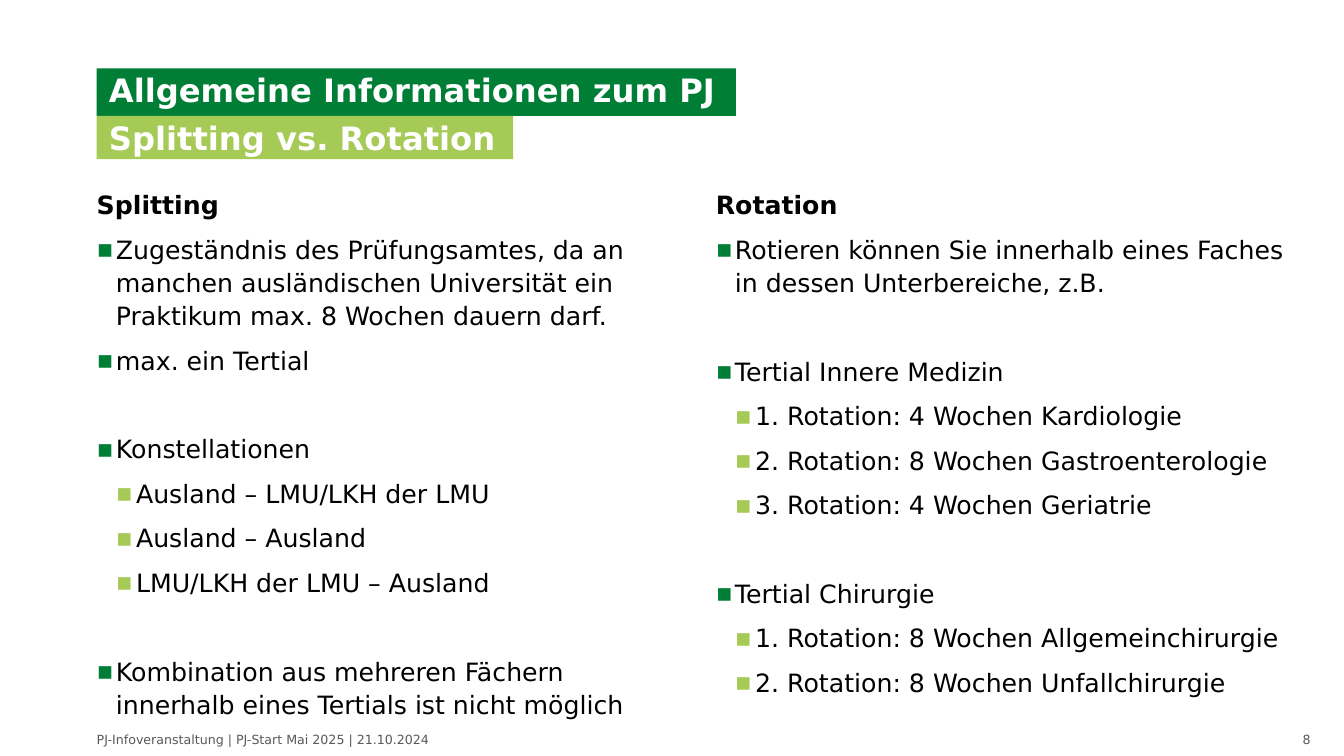
"""Build the slide comparing splitting and rotation in the PJ."""
from lxml import etree
from pptx import Presentation
from pptx import util as u
from pptx.dml.color import RGBColor
from pptx.enum import shapes, text
from pptx.oxml.ns import qn

DARK_GREEN = RGBColor(0x00, 0x7E, 0x36)
LIGHT_GREEN = RGBColor(0xA6, 0xCA, 0x56)
WHITE = RGBColor(0xFF, 0xFF, 0xFF)
BLACK = RGBColor(0x00, 0x00, 0x00)
GREY = RGBColor(0x59, 0x59, 0x59)
FONT = "DejaVu Sans"

LEFT = 0.96
BANNERS = [
    ("Allgemeine Informationen zum PJ", 0.68, 6.34, 0.47, DARK_GREEN),
    ("Splitting vs. Rotation", 1.15, 4.13, 0.43, LIGHT_GREEN),
]
COLUMNS = [
    (LEFT, "Splitting", [
        [(0, "Zugeständnis des Prüfungsamtes, da an manchen ausländischen "
             "Universität ein Praktikum max. 8 Wochen dauern darf."),
         (0, "max. ein Tertial")],
        [(0, "Konstellationen"),
         (1, "Ausland – LMU/LKH der LMU"),
         (1, "Ausland – Ausland"),
         (1, "LMU/LKH der LMU – Ausland")],
        [(0, "Kombination aus mehreren Fächern innerhalb eines Tertials "
             "ist nicht möglich")],
    ]),
    (7.1, "Rotation", [
        [(0, "Rotieren können Sie innerhalb eines Faches in dessen "
             "Unterbereiche, z.B.")],
        [(0, "Tertial Innere Medizin"),
         (1, "1. Rotation: 4 Wochen Kardiologie"),
         (1, "2. Rotation: 8 Wochen Gastroenterologie"),
         (1, "3. Rotation: 4 Wochen Geriatrie")],
        [(0, "Tertial Chirurgie"),
         (1, "1. Rotation: 8 Wochen Allgemeinchirurgie"),
         (1, "2. Rotation: 8 Wochen Unfallchirurgie")],
    ]),
]
FOOTERS = [
    ("PJ-Infoveranstaltung | PJ-Start Mai 2025 | 21.10.2024", LEFT, 10.53,
     text.PP_ALIGN.LEFT),
    ("8", 11.94, 1.06, text.PP_ALIGN.RIGHT),
]
BULLETS = [(0.19, 0.19, DARK_GREEN), (0.39, 0.2, LIGHT_GREEN)]
GROUP_GAP = u.Pt(31.7)
BODY_SPACING = {"line_spacing": 1.1, "space_after": u.Pt(8)}


def apply(target, values):
    for name, value in values.items():
        setattr(target, name, value)


def inches(*lengths):
    return [u.Inches(length) for length in lengths]


def prepare_frame(shape, insets, anchor):
    frame = shape.text_frame
    sides = ("margin_left", "margin_top", "margin_right", "margin_bottom")
    apply(frame, dict(zip(sides, inches(*insets))))
    apply(frame, {"word_wrap": True, "vertical_anchor": anchor})
    return frame


def write(paragraph, words, size, color, bold=False, **layout):
    apply(paragraph, layout)
    run = paragraph.add_run()
    run.text = words
    apply(run.font, {"name": FONT, "size": u.Pt(size), "bold": bold})
    run.font.color.rgb = color


def add_bullet(paragraph, level):
    margin, hanging, color = BULLETS[level]
    paragraph.level = level
    properties = paragraph._p.get_or_add_pPr()
    properties.set("marL", str(u.Inches(margin)))
    properties.set("indent", str(-u.Inches(hanging)))
    bullet_color = etree.SubElement(properties, qn("a:buClr"))
    etree.SubElement(bullet_color, qn("a:srgbClr"), val=str(color))
    etree.SubElement(properties, qn("a:buFont"), typeface=FONT)
    etree.SubElement(properties, qn("a:buChar"), char="▪")


def add_banner(slide, words, top, width, height, color):
    shape = slide.shapes.add_shape(
        shapes.MSO_SHAPE.RECTANGLE, *inches(LEFT, top, width, height))
    shape.shadow.inherit = False
    shape.fill.solid()
    shape.fill.fore_color.rgb = color
    shape.line.fill.background()
    frame = prepare_frame(shape, (0.12, 0.02, 0.08, 0.02), text.MSO_ANCHOR.TOP)
    write(frame.paragraphs[0], words, 23, WHITE, True,
          alignment=text.PP_ALIGN.LEFT)


def add_column(slide, left, heading, groups):
    box = slide.shapes.add_textbox(*inches(left, 1.85, 5.67, 5.09))
    frame = prepare_frame(box, (0, 0, 0, 0), text.MSO_ANCHOR.TOP)
    write(frame.paragraphs[0], heading, 18, BLACK, True, **BODY_SPACING)
    for group_index, group in enumerate(groups):
        for item_index, (level, words) in enumerate(group):
            paragraph = frame.add_paragraph()
            add_bullet(paragraph, level)
            if group_index and not item_index:
                paragraph.space_before = GROUP_GAP
            write(paragraph, words, 18, BLACK, **BODY_SPACING)


def add_footer(slide, words, left, width, alignment):
    box = slide.shapes.add_textbox(*inches(left, 7.21, width, 0.2))
    frame = prepare_frame(box, (0, 0, 0, 0), text.MSO_ANCHOR.BOTTOM)
    write(frame.paragraphs[0], words, 9, GREY, alignment=alignment)


def main():
    presentation = Presentation()
    apply(presentation, {"slide_width": u.Inches(13.33),
                         "slide_height": u.Inches(7.5)})
    slide = presentation.slides.add_slide(presentation.slide_layouts[6])
    for banner in BANNERS:
        add_banner(slide, *banner)
    for column in COLUMNS:
        add_column(slide, *column)
    for footer in FOOTERS:
        add_footer(slide, *footer)
    presentation.save("out.pptx")


if __name__ == "__main__":
    main()
